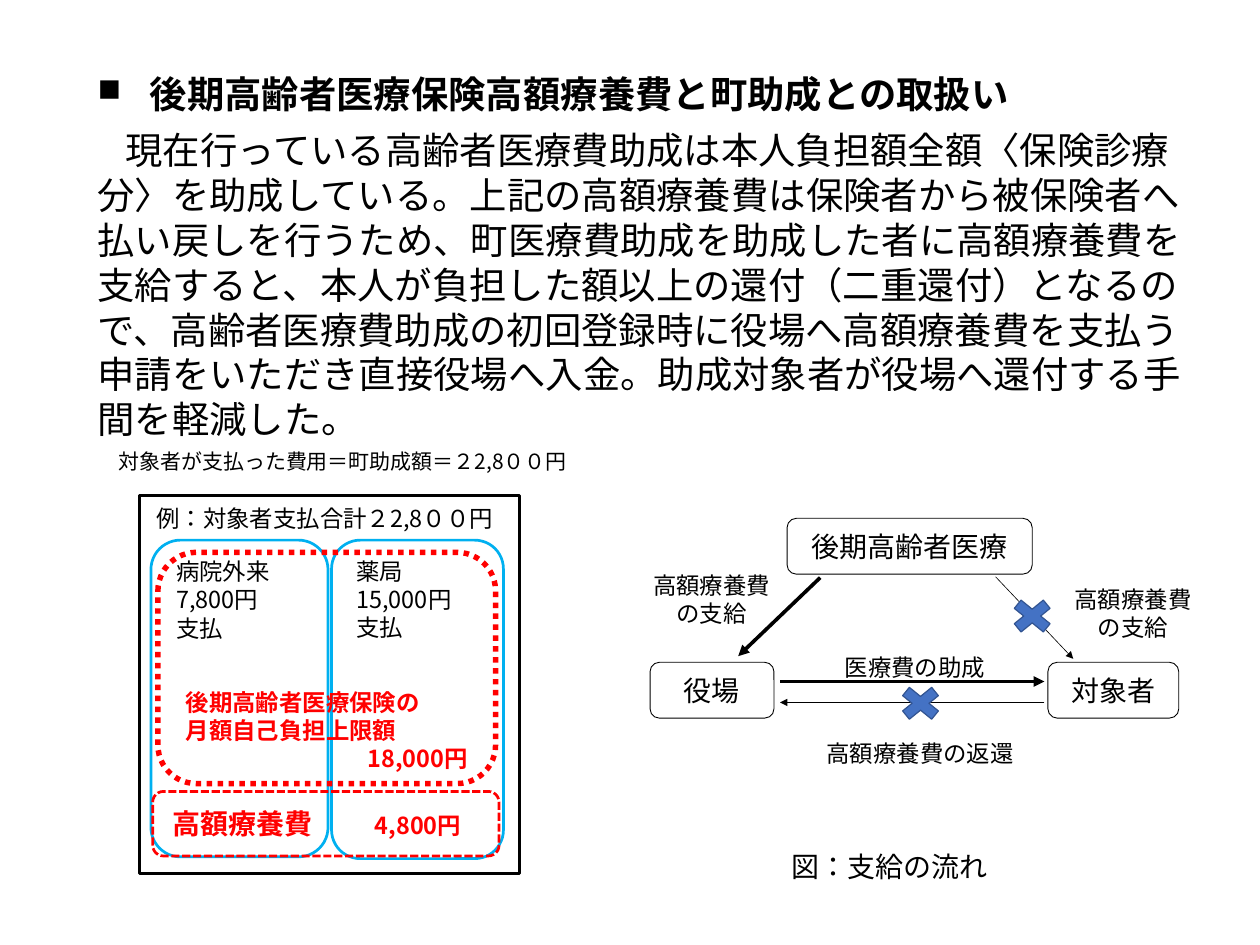
from lxml.etree import SubElement
from pptx import Presentation
from pptx.dml.color import RGBColor
from pptx.enum.dml import MSO_LINE
from pptx.enum.lang import MSO_LANGUAGE_ID
from pptx.enum.shapes import MSO_CONNECTOR, MSO_SHAPE
from pptx.enum.text import MSO_ANCHOR, PP_ALIGN
from pptx.oxml.ns import qn
from pptx.util import Inches, Pt

FONT = "Noto Sans CJK JP"
BLACK = RGBColor(0x00, 0x00, 0x00)
RED = RGBColor(0xFF, 0x00, 0x00)
SKY = RGBColor(0x00, 0xB0, 0xF0)
BLUE = RGBColor(0x44, 0x72, 0xC4)
NAVY = RGBColor(0x32, 0x54, 0x91)
SMALL, LARGE, BODY = 19.3, 23.1, 30.8
LEFT, CENTER, RIGHT = PP_ALIGN.LEFT, PP_ALIGN.CENTER, PP_ALIGN.RIGHT
TOP, MIDDLE, BOTTOM = MSO_ANCHOR.TOP, MSO_ANCHOR.MIDDLE, MSO_ANCHOR.BOTTOM


def style_paragraph(p, size, color=BLACK, bold=False, align=LEFT):
    """Set the font, language, alignment and line pitch of a paragraph."""
    p.alignment = align
    p.line_spacing = Pt(round(size * 1.2, 1))
    p.font.size = Pt(size)
    p.font.bold = bold
    p.font.language_id = MSO_LANGUAGE_ID.JAPANESE
    p.font.color.rgb = color
    p.font.name = FONT
    SubElement(p.font._rPr, qn("a:ea"), typeface=FONT)
    for r in p.runs:
        r.font.language_id = MSO_LANGUAGE_ID.JAPANESE


def add_property(p, tag, **attributes):
    """Insert a paragraph property element ahead of the font defaults."""
    child = SubElement(p._p.pPr, qn(tag), **attributes)
    p.font._rPr.addprevious(child)
    return child


def set_text(sp, lines, size, color=BLACK, bold=False, align=LEFT, anchor=MIDDLE):
    """Fill a shape with lines of uniform text and return the paragraphs."""
    tf = sp.text_frame
    tf.word_wrap = True
    tf.vertical_anchor = anchor
    tf.margin_left = tf.margin_right = Inches(0.19)
    tf.margin_top = tf.margin_bottom = Inches(0.1)
    tf.text = "\n".join(lines)
    for p in tf.paragraphs:
        style_paragraph(p, size, color, bold, align)
    return tf.paragraphs


def add_label(s, box, text, size=SMALL, align=CENTER):
    """Add a one-paragraph text box."""
    set_text(s.shapes.add_textbox(*map(Inches, box)), [text], size, align=align)


def add_frame(s, box, color, width, kind=MSO_SHAPE.ROUNDED_RECTANGLE, dash=None):
    """Add an unfilled outline shape."""
    sp = s.shapes.add_shape(kind, *map(Inches, box))
    sp.shadow.inherit = False
    sp.fill.background()
    sp.line.color.rgb = color
    sp.line.width = Pt(width)
    if dash:
        sp.line.dash_style = dash
    return sp


def add_arrow(s, start, end, width):
    """Add a straight black arrow."""
    c = s.shapes.add_connector(MSO_CONNECTOR.STRAIGHT, *map(Inches, start + end))
    c.line.color.rgb = BLACK
    c.line.width = Pt(width)
    SubElement(c.line._get_or_add_ln(), qn("a:tailEnd"), type="triangle")
    SubElement(c._element.spPr, qn("a:effectLst"))


def add_cross(s, left, top):
    """Add a blue cross that strikes out a flow."""
    sp = add_frame(s, (left, top, 0.64, 0.52), NAVY, 1, MSO_SHAPE.MATH_MULTIPLY)
    sp.fill.solid()
    sp.fill.fore_color.rgb = BLUE


def add_explanation(s):
    """Add the bulleted heading and the body paragraph."""
    tf = s.shapes.add_textbox(*map(Inches, (1.02, 0.77, 12.86, 4.38))).text_frame
    tf.word_wrap = True
    heading, body = tf.paragraphs[0], tf.add_paragraph()
    heading.text = "後期高齢者医療保険高額療養費と町助成との取扱い"
    body.text = (
        "現在行っている高齢者医療費助成は本人負担額全額〈保険診療分〉を助成している。"
        "上記の高額療養費は保険者から被保険者へ払い戻しを行うため、"
        "町医療費助成を助成した者に高額療養費を支給すると、"
        "本人が負担した額以上の還付（二重還付）となるので、"
        "高齢者医療費助成の初回登録時に役場へ高額療養費を支払う申請をいただき"
        "直接役場へ入金。助成対象者が役場へ還付する手間を軽減した。")
    for p, margin, indent in ((heading, 0.6, -0.6), (body, 0, 0.32)):
        style_paragraph(p, BODY, bold=p is heading)
        p._p.pPr.set("marL", str(Inches(margin)))
        p._p.pPr.set("indent", str(Inches(indent)))
    add_property(heading, "a:buSzPct", val="85000")
    add_property(heading, "a:buChar", char="■")
    body.space_before = Pt(9.2)


def add_cost_example(s):
    """Add the framed example of payments and the monthly limit."""
    add_label(s, (1.17, 5.04, 5.73, 0.49),
              "対象者が支払った費用＝町助成額＝２2,8００円", 17.3, LEFT)
    frame = add_frame(s, (1.6, 5.68, 4.35, 4.33), BLACK, 2.25, MSO_SHAPE.RECTANGLE)
    set_text(frame, ["例：対象者支払合計２2,8００円"], SMALL, anchor=TOP)
    frame.text_frame.margin_right = 0
    for box, payer, amount in (((1.73, 6.19, 2.03, 3.63), "病院外来", "7,800円"),
                               ((3.8, 6.19, 1.97, 3.65), "薬局", "15,000円")):
        set_text(add_frame(s, box, SKY, 2.25), [payer, amount, "支払"], SMALL, anchor=TOP)

    limit = add_frame(s, (1.81, 6.33, 3.87, 2.65), RED, 4.5, dash=MSO_LINE.ROUND_DOT)
    lines = ["後期高齢者医療保険の", "月額自己負担上限額", "18,000円"]
    set_text(limit, lines, SMALL, RED, True, anchor=BOTTOM)[-1].alignment = RIGHT
    limit.text_frame.margin_bottom = 0

    excess = add_frame(s, (1.75, 9.07, 3.97, 0.74), RED, 2.25, dash=MSO_LINE.SQUARE_DOT)
    p = set_text(excess, ["高額療養費\t"], LARGE, RED, True)[0]
    tabs = add_property(p, "a:tabLst")
    SubElement(tabs, qn("a:tab"), pos=str(Inches(2.32)), algn="l")
    r = p.add_run()
    r.text = "4,800円"
    r.font.size = Pt(SMALL)


def add_payment_flow(s):
    """Add the diagram of who pays whom."""
    for box, name in (((9.02, 5.94, 2.81, 0.64), "後期高齢者医療"),
                      ((7.45, 7.59, 1.42, 0.64), "役場"),
                      ((12.01, 7.59, 1.5, 0.64), "対象者")):
        set_text(add_frame(s, box, BLACK, 0.75), [name], LARGE, align=CENTER)
    for start, end, width in (((9.4, 6.62), (8.46, 7.52), 3),
                              ((11.41, 6.61), (12.3, 7.55), 0.5),
                              ((8.94, 7.81), (11.97, 7.81), 3),
                              ((11.97, 8.05), (8.94, 8.05), 0.5)):
        add_arrow(s, start, end, width)
    add_cross(s, 11.51, 6.8)
    add_cross(s, 10.23, 7.8)
    for box, text in (((7.27, 6.38, 1.77, 0.98), "高額療養費の支給"),
                      ((12.1, 6.54, 1.77, 0.98), "高額療養費の支給"),
                      ((9.2, 7.33, 2.57, 0.64), "医療費の助成"),
                      ((9.26, 8.31, 2.57, 0.64), "高額療養費の返還")):
        add_label(s, box, text)
    add_label(s, (8.88, 9.62, 3.55, 0.61), "図：支給の流れ", LARGE, LEFT)


def main():
    """Build the slide and save it."""
    prs = Presentation()
    prs.slide_width, prs.slide_height = Inches(14.44), Inches(10.83)
    s = prs.slides.add_slide(prs.slide_layouts[6])
    add_explanation(s)
    add_cost_example(s)
    add_payment_flow(s)
    prs.save("out.pptx")


if __name__ == "__main__":
    main()
